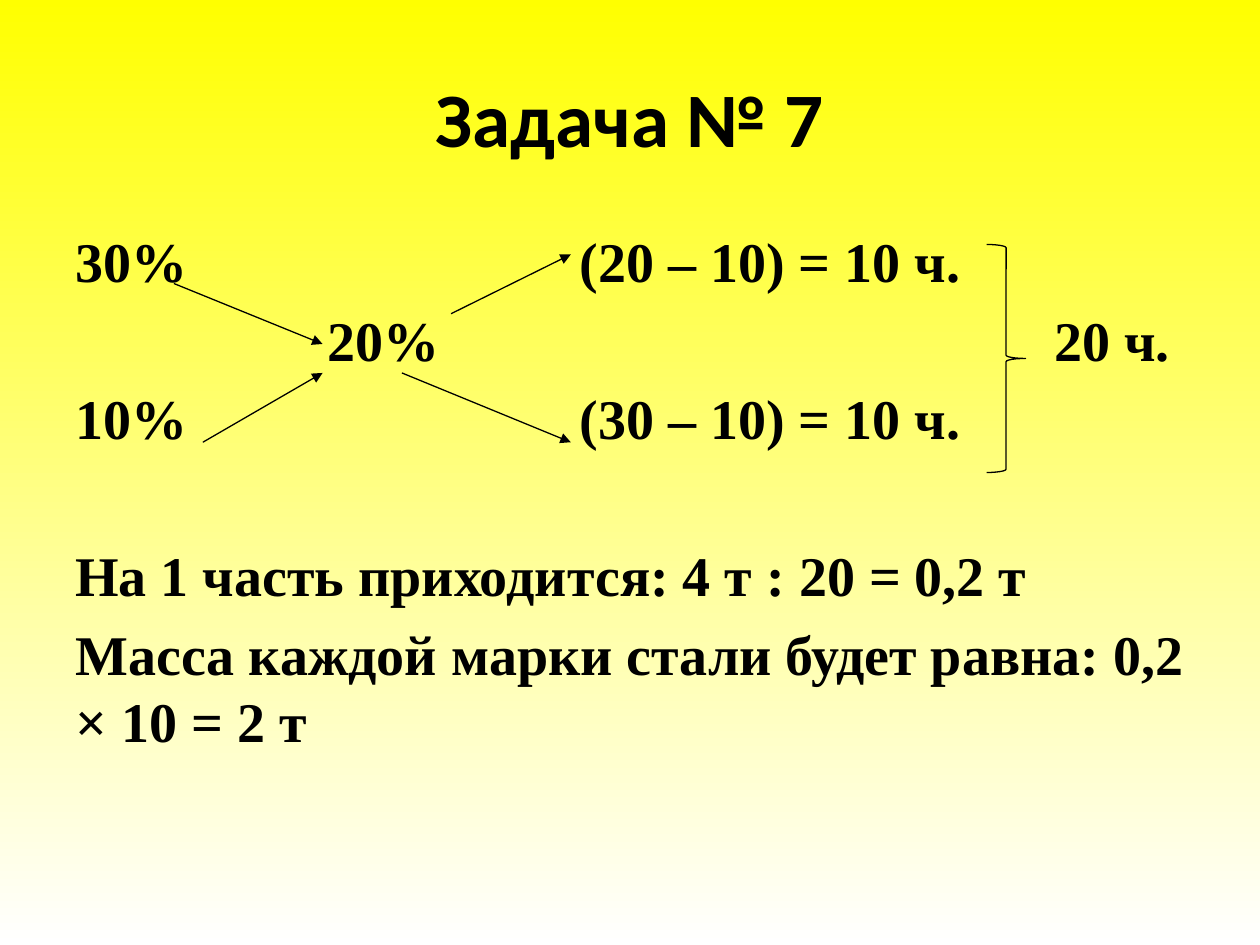
from lxml import etree
from pptx import Presentation
from pptx.dml.color import RGBColor
from pptx.enum.shapes import MSO_CONNECTOR, MSO_SHAPE
from pptx.enum.text import MSO_ANCHOR, PP_ALIGN
from pptx.oxml.ns import qn
from pptx.util import Inches, Pt

STRAIGHT = MSO_CONNECTOR.STRAIGHT
RIGHT_BRACE = MSO_SHAPE.RIGHT_BRACE
TOP, MIDDLE = MSO_ANCHOR.TOP, MSO_ANCHOR.MIDDLE
LEFT, CENTER = PP_ALIGN.LEFT, PP_ALIGN.CENTER

COLORS = {"top": "FFFF00", "bottom": "FFFFFF", "ink": "000000"}
LINE_WIDTH = Pt(0.75)
TAB_STOPS = (2, 4, 7.77)
SCHEME_ROWS = (
    "30%\t\t(20 – 10) = 10 ч.",
    "\t20%\t\t20 ч.",
    "10%\t\t(30 – 10) = 10 ч.",
)
SOLUTION = (
    "На 1 часть приходится: 4 т : 20 = 0,2 т",
    "Масса каждой марки стали будет равна: 0,2 × 10 = 2 т",
)
ARROWS = (
    ((1.38, 2.25), (2.56, 2.73)),
    ((3.19, 2.96), (4.53, 3.51)),
    ((1.61, 3.51), (2.56, 2.96)),
    ((3.58, 2.49), (4.53, 2.02)),
)


def color(name):
    return RGBColor.from_string(COLORS[name])


def set_background(slide):
    fill = slide.background.fill
    fill.gradient()
    fill.gradient_angle = 270
    for stop, name, position in zip(fill.gradient_stops, ("top", "bottom"), (0, 1)):
        stop.color.rgb = color(name)
        stop.position = position


def add_text_frame(slide, box, anchor):
    frame = slide.shapes.add_textbox(*map(Inches, box)).text_frame
    frame.word_wrap = True
    frame.vertical_anchor = anchor
    return frame


def write(paragraph, text, *, font, size, align=LEFT, before=0, tabs=()):
    paragraph.alignment = align
    paragraph.space_before = Pt(before)
    if tabs:
        properties = paragraph._p.get_or_add_pPr()
        tab_list = etree.SubElement(properties, qn("a:tabLst"))
        for position in tabs:
            etree.SubElement(tab_list, qn("a:tab"), pos=str(Inches(position)), algn="l")
    run = paragraph.add_run()
    run.text = text
    run.font.name = font
    run.font.size = Pt(size)
    run.font.bold = True
    run.font.color.rgb = color("ink")


def add_title(slide, box):
    frame = add_text_frame(slide, box, MIDDLE)
    write(frame.paragraphs[0], "Задача № 7", font="Calibri", size=44, align=CENTER)


def add_body(slide, box):
    frame = add_text_frame(slide, box, TOP)
    gap, empty_row = 6.4, 45
    for index, text in enumerate(SCHEME_ROWS + SOLUTION):
        paragraph = frame.paragraphs[0] if index == 0 else frame.add_paragraph()
        before = gap + empty_row if index == len(SCHEME_ROWS) else gap
        tabs = TAB_STOPS if index < len(SCHEME_ROWS) else ()
        write(paragraph, text, font="Times New Roman", size=32, before=before, tabs=tabs)


def add_arrow(slide, start, end):
    arrow = slide.shapes.add_connector(STRAIGHT, *map(Inches, start + end))
    arrow.line.color.rgb = color("ink")
    arrow.line.width = LINE_WIDTH
    etree.SubElement(arrow.line._get_or_add_ln(), qn("a:tailEnd"), type="triangle")
    etree.SubElement(arrow._element.spPr, qn("a:effectLst"))


def add_brace(slide, box):
    brace = slide.shapes.add_shape(RIGHT_BRACE, *map(Inches, box))
    brace.shadow.inherit = False
    brace.fill.background()
    brace.line.color.rgb = color("ink")
    brace.line.width = LINE_WIDTH


def main():
    presentation = Presentation()
    presentation.slide_width, presentation.slide_height = Inches(10), Inches(7.5)
    slide = presentation.slides.add_slide(presentation.slide_layouts[6])
    set_background(slide)
    add_title(slide, (0.5, 0.3, 9, 1.25))
    add_body(slide, (0.5, 1.75, 9, 4.95))
    for start, end in ARROWS:
        add_arrow(slide, start, end)
    add_brace(slide, (7.83, 1.94, 0.31, 1.81))
    presentation.save("out.pptx")


if __name__ == "__main__":
    main()
